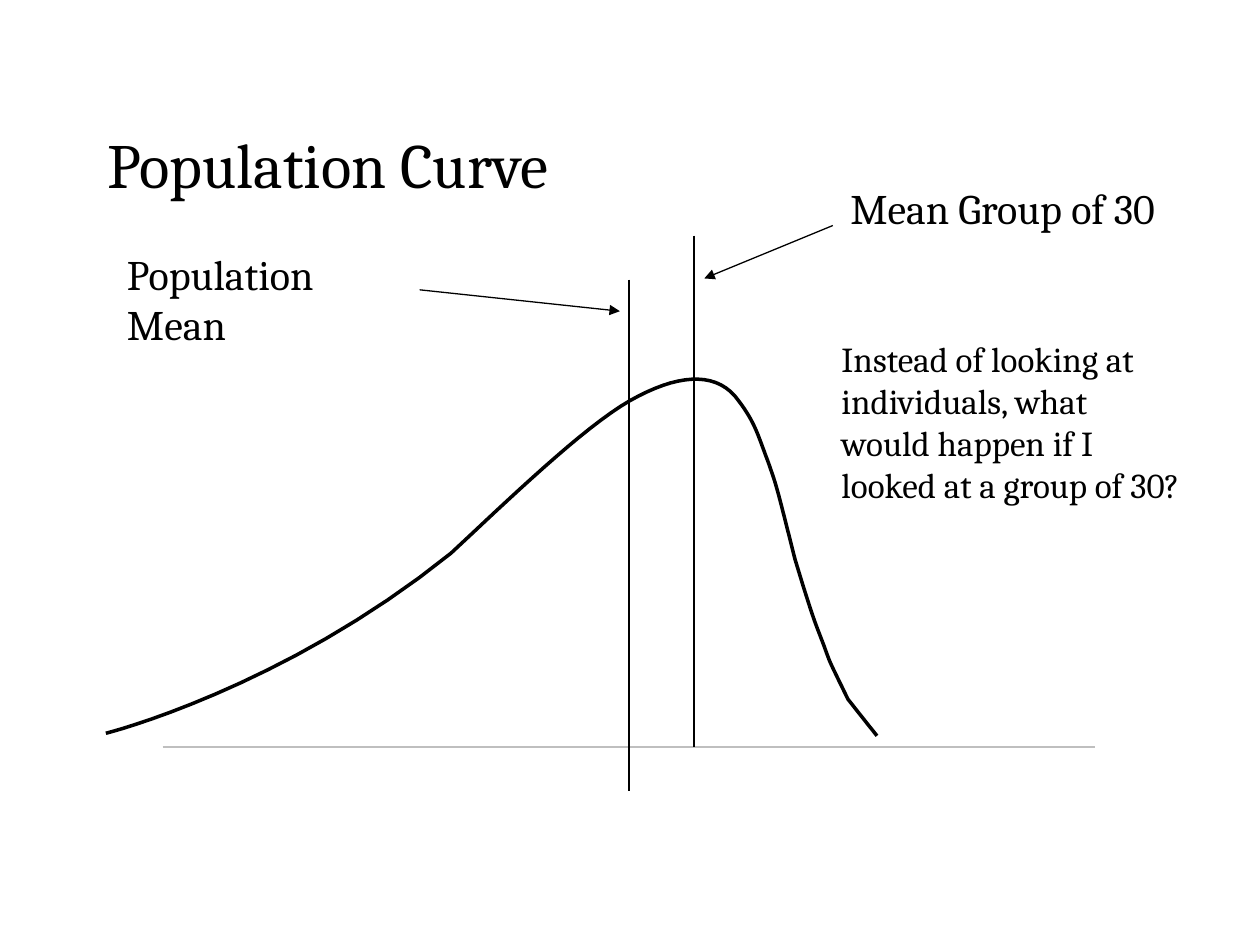
from lxml import etree
from pptx import Presentation
from pptx import util as u
from pptx.dml.color import RGBColor
from pptx.enum import shapes, text
from pptx.oxml.ns import qn

COLS, ROWS = 100, 75
CELL = u.Inches(0.1)
CURVE_START = (61.2, 28.3)
CURVE = [
    [(60, 26.8), (60.8, 27.8), (58.9, 25.4)],
    [(57.2, 21.9), (57.6, 22.8), (56.9, 20.9)],
    [(56.2, 19.1), (56, 18.6), (54.7, 14.3)],
    [(53.3, 8.8), (53.3, 8.6), (52.5, 6.4)],
    [(51.7, 4.3), (51.5, 3.3), (49.9, 1.3)],
    [(48.2, -0.6), (45.3, -0.4), (41.6, 1.7)],
    [(37.9, 3.8), (31.8, 9.7), (27.4, 13.8)],
    [(14, 24.6), (0, 28.1), (0, 28.1)],
]


def color(value):
    """Turn a hex string into a colour."""
    return RGBColor.from_string(value)


def grid(*cells):
    """Turn counts of grid cells into lengths."""
    return [round(c * CELL) for c in cells]


def write(sp, words, size, anchor=text.MSO_ANCHOR.TOP, fill="000000", font="Cambria"):
    """Put formatted, left-aligned text into a shape."""
    tf = sp.text_frame
    tf.word_wrap = True
    tf.auto_size = text.MSO_AUTO_SIZE.NONE
    tf.vertical_anchor = anchor
    p = tf.paragraphs[0]
    p.alignment = text.PP_ALIGN.LEFT
    r = p.add_run()
    r.text = words
    r.font.size, r.font.name = u.Pt(size), font
    r.font.color.rgb = color(fill)


def add_text(parent, box, words, size):
    """Add a text box."""
    write(parent.add_textbox(*grid(*box)), words, size)


def add_line(parent, start, end, width=1, fill="000000", arrow=False):
    """Draw a straight line, with an arrowhead at its end if asked."""
    sp = parent.add_connector(shapes.MSO_CONNECTOR.STRAIGHT, *grid(*start, *end))
    sp.line.width = u.Pt(width)
    sp.line.color.rgb = color(fill)
    if arrow:
        etree.SubElement(sp.line._get_or_add_ln(), qn("a:tailEnd"), type="triangle")
    etree.SubElement(sp._element.spPr, qn("a:effectLst"))


def bezier(a, b, c, d, steps=16):
    """List the points of a cubic curve after its start."""
    for i in range(1, steps + 1):
        t = i / steps
        weights = ((1 - t) ** 3, 3 * t * (1 - t) ** 2, 3 * t * t * (1 - t), t ** 3)
        yield tuple(sum(w * q[k] for w, q in zip(weights, (a, b, c, d))) for k in (0, 1))


def add_curve(parent, left, top):
    """Draw the skewed population curve from the corner of its box."""
    points = [CURVE_START]
    for segment in CURVE:
        points += bezier(points[-1], *segment)
    start, *rest = [grid(left + x, top + y) for x, y in points]
    builder = parent.build_freeform(*start)
    builder.add_line_segments(rest, close=False)
    sp = builder.convert_to_shape()
    sp.shadow.inherit = False
    sp.fill.background()
    sp.line.width = u.Pt(2)
    sp.line.color.rgb = color("000000")


def add_marker(parent, box, words, label, mean, arrow):
    """Draw a labelled mean line with its arrow inside a box."""
    left, top, _, height = box
    x, y = mean
    add_line(parent, (left + x, top + y), (left + x, top + height))
    label_x, label_width = label
    add_text(parent, (left + label_x, top, label_width, 5), words, 24)
    ends = [(left + ax, top + ay) for ax, ay in arrow]
    add_line(parent, *ends, width=0.75, arrow=True)


def add_title(s, box, words):
    """Place and format the title."""
    sp = s.shapes.title
    sp.left, sp.top, sp.width, sp.height = grid(*box)
    write(sp, words, 36, text.MSO_ANCHOR.MIDDLE)


def main():
    """Build the slide."""
    prs = Presentation()
    prs.slide_width, prs.slide_height = grid(COLS, ROWS)
    s = prs.slides.add_slide(prs.slide_layouts[5])
    add_line(s.shapes, (12.9, 59.3), (86.9, 59.3), fill="BFBFBF")
    add_title(s, (7.5, 6.7, 85, 12.5), "Population Curve")
    add_marker(s.shapes, (9.1, 19.2, 40.8, 43.6), "Population Mean",
               label=(0, 23), mean=(40.8, 3), arrow=((24.2, 3.8), (40.1, 5.5)))
    add_marker(s.shapes.add_group_shape().shapes, (55.1, 14, 38.1, 45.3), "Mean Group of 30",
               label=(11.4, 27.5), mean=(0, 4.7), arrow=((11, 3.9), (0.8, 8.1)))
    add_text(s.shapes, (65.8, 26.3, 28.9, 14.5),
             "Instead of looking at individuals, what would happen if I looked at a group of 30?", 20)
    add_curve(s.shapes, 8.4, 30.1)
    prs.save("out.pptx")


if __name__ == "__main__":
    main()
